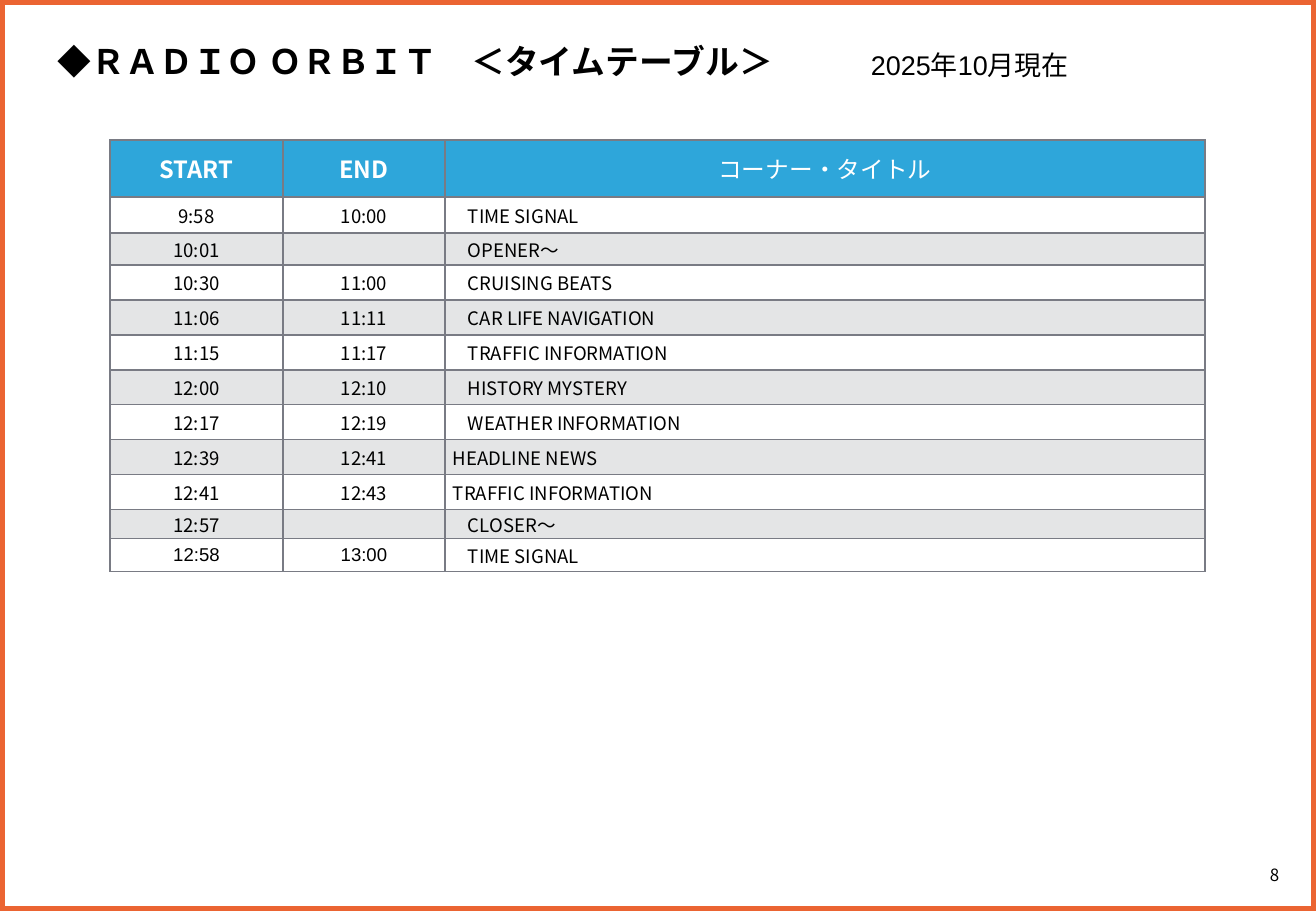
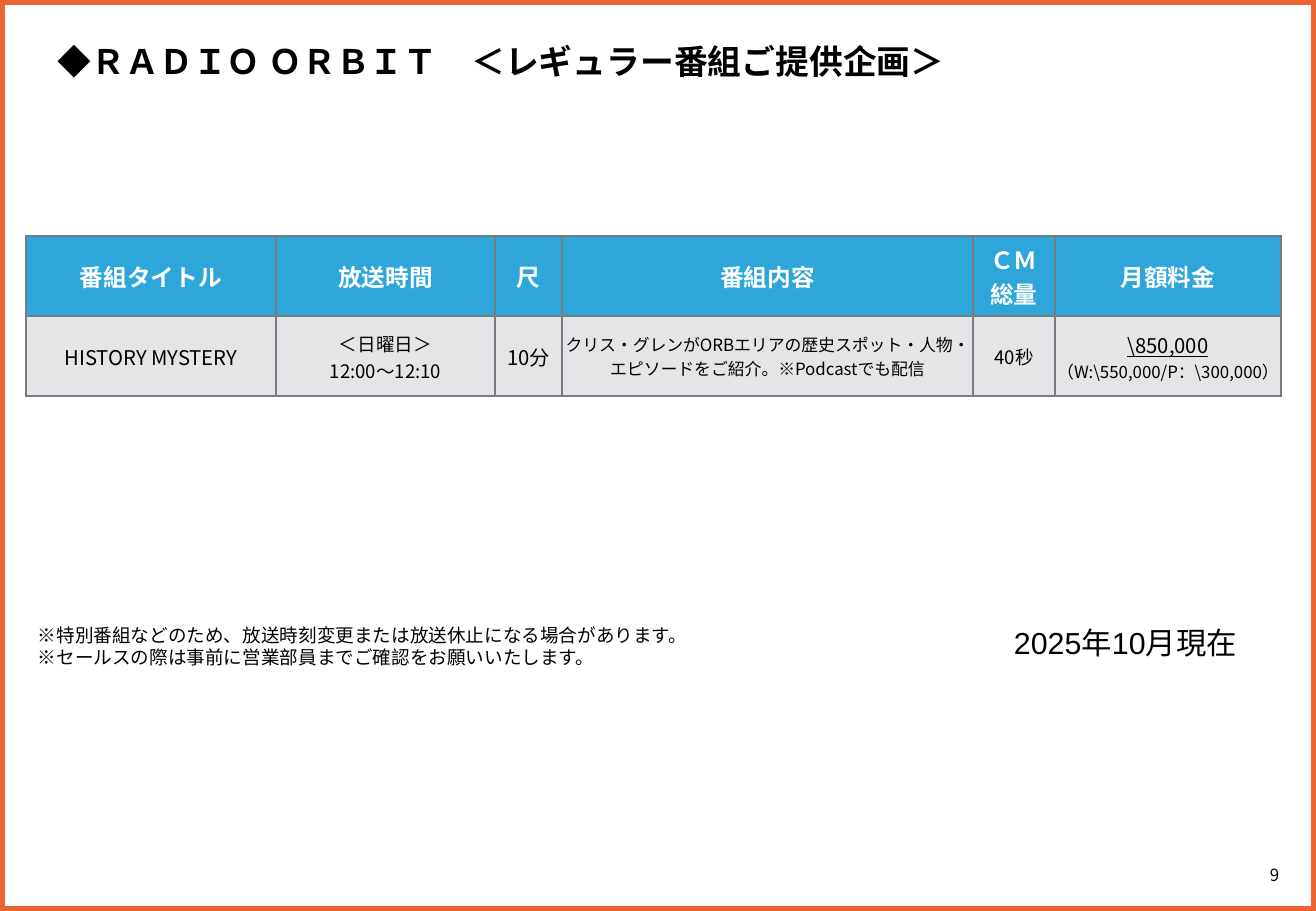
from lxml.etree import SubElement
from pptx import Presentation
from pptx.dml.color import RGBColor
from pptx.enum.shapes import MSO_SHAPE
from pptx.enum.text import MSO_ANCHOR, PP_ALIGN
from pptx.oxml.ns import qn
from pptx.util import Emu, Pt

PX = 914400 / 121.5
W, H = 1316, 911
ORANGE = RGBColor(0xEB, 0x64, 0x32)
BLUE = RGBColor(0x2E, 0xA6, 0xDA)
STRIPE = RGBColor(0xE4, 0xE5, 0xE6)
GRID = RGBColor(0x79, 0x7B, 0x84)
WHITE = RGBColor(0xFF, 0xFF, 0xFF)
BLACK = RGBColor(0x00, 0x00, 0x00)
NOTO, ARIAL = "Noto Sans CJK JP", "Arial"
LEFT, CENTER = PP_ALIGN.LEFT, PP_ALIGN.CENTER
TOP, MIDDLE = MSO_ANCHOR.TOP, MSO_ANCHOR.MIDDLE
DATE = "2025年10月現在"


def px(*lengths):
    return [Emu(round(n * PX)) for n in lengths]


def write(tf, paragraphs, align):
    """Fill tf; each paragraph is a list of (text, size, font, colour, bold, underline)."""
    for i, runs in enumerate(paragraphs):
        p = tf.paragraphs[0] if i == 0 else tf.add_paragraph()
        p.alignment = align
        for text, size, font, color, bold, underline in runs:
            if not text:
                SubElement(p._p, qn("a:endParaRPr"), sz=str(size * 100))
                continue
            r = p.add_run()
            r.text = text
            r.font.size, r.font.bold, r.font.underline = Pt(size), bold, underline
            r.font.color.rgb = color
            r.font.name = font
            SubElement(r.font._element, qn("a:ea"), typeface=NOTO)


# Timetable: start, end, corner title, indent of the title
corners = [
    ("9:58", "10:00", "TIME SIGNAL", 23),
    ("10:01", "", "OPENER〜", 23),
    ("10:30", "11:00", "CRUISING BEATS", 23),
    ("11:06", "11:11", "CAR LIFE NAVIGATION", 23),
    ("11:15", "11:17", "TRAFFIC INFORMATION", 23),
    ("12:00", "12:10", "HISTORY MYSTERY", 23),
    ("12:17", "12:19", "WEATHER INFORMATION", 23),
    ("12:39", "12:41", "HEADLINE NEWS", 8),
    ("12:41", "12:43", "TRAFFIC INFORMATION", 8),
    ("12:57", "", "CLOSER〜", 23),
    ("12:58", "13:00", "TIME SIGNAL", 23),
]
# A cell is (align, left/top/right/bottom margins, paragraphs)
timetable = [[
    (CENTER, (0, 0, 0, 0), [[(text, 14, font, WHITE, font == NOTO, False)]])
    for text, font in (("START", NOTO), ("END", NOTO), ("コーナー・タイトル", ARIAL))
]]
for start, end, corner, indent in corners:
    time_font = ARIAL if start == "12:58" else NOTO
    timetable.append([
        (align, (left, 0, 0, 0), [[(text, 11, font, BLACK, False, False)]])
        for text, font, align, left in (
            (start, time_font, CENTER, 0), (end, time_font, CENTER, 0), (corner, NOTO, LEFT, indent))
    ])

# Sponsorship plan: each cell is a list of (line, size)
plan_cells = [
    [("HISTORY MYSTERY", 12)],
    [("＜日曜日＞", 11), ("12:00～12:10", 11)],
    [("10分", 12)],
    [("クリス・グレンがORBエリアの歴史スポット・人物・エピソードをご紹介。※Podcastでも配信", 10)],
    [("40秒", 11)],
    [("\\850,000", 12), ("（W:\\550,000/P：\\300,000）", 10)],
]
plan = [
    [(CENTER, (12, 6, 12, 6), [[(text, 14, ARIAL, WHITE, True, False)]])
     for text in ("番組タイトル", "放送時間", "尺", "番組内容", "ＣＭ総量", "月額料金")],
    [(CENTER, (1, 1, 1, 0), [[(text, size, NOTO, BLACK, False, text == "\\850,000")] for text, size in lines])
     for lines in plan_cells],
]
notes = [
    [(text, 11, NOTO, BLACK, False, False)] for text in (
        "※特別番組などのため、放送時刻変更または放送休止になる場合があります。",
        "※セールスの際は事前に営業部員までご確認をお願いいたします。")
]

# Page, heading, table place, columns, rows, cells, striped row parity, header rule, date place and size, notes
slides = [
    (8, "タイムテーブル", (110, 140), [173, 162, 760], [57, 36, 32] + [35] * 7 + [29, 33],
     timetable, 0, 1, (859, 43, 230, 45), 16, []),
    (9, "レギュラー番組ご提供企画", (26, 236), [250, 219, 67, 411, 82, 226], [80, 80],
     plan, 1, 2, (1002, 618, 259, 49), 18, notes),
]

prs = Presentation()
prs.slide_width, prs.slide_height = px(W, H)

for page, heading, place, cols, rows, cells, stripe, header_rule, date_box, date_size, notes_text in slides:
    s = prs.slides.add_slide(prs.slide_layouts[6])

    frame = s.shapes.add_shape(MSO_SHAPE.RECTANGLE, *px(0, 0, W, H))
    frame.shadow.inherit = False
    frame.fill.background()
    frame.line.color.rgb = ORANGE
    frame.line.width = Pt(6)

    table = s.shapes.add_table(len(rows), len(cols), *px(*place, sum(cols), sum(rows))).table
    table.first_row = table.horz_banding = False
    for column, width in zip(table.columns, px(*cols)):
        column.width = width
    for row, height in zip(table.rows, px(*rows)):
        row.height = height
    for i, row_cells in enumerate(cells):
        for j, (align, margins, paragraphs) in enumerate(row_cells):
            cell = table.cell(i, j)
            cell.vertical_anchor = MIDDLE
            cell.margin_left, cell.margin_top, cell.margin_right, cell.margin_bottom = px(*margins)
            for side in ("lnL", "lnR", "lnT", "lnB"):
                weight = header_rule if i == 0 and side == "lnB" else 1
                ln = SubElement(cell._tc.get_or_add_tcPr(), qn(f"a:{side}"), w=str(Pt(weight)))
                SubElement(SubElement(ln, qn("a:solidFill")), qn("a:srgbClr"), val=str(GRID))
            if i == 0 or i % 2 == stripe:
                cell.fill.solid()
                cell.fill.fore_color.rgb = STRIPE if i else BLUE
            else:
                cell.fill.background()
            write(cell.text_frame, paragraphs, align)

    title = [("◆", 20, NOTO, BLACK, False, False),
             (f"ＲＡＤＩＯ ＯＲＢＩＴ　＜{heading}＞", 20, NOTO, BLACK, True, False)]
    texts = [
        ((1234, 853, 81, 43), MIDDLE, CENTER, [[(str(page), 10, NOTO, BLACK, False, False)]]),
        (date_box, TOP, LEFT, [[(DATE, date_size, ARIAL, BLACK, False, False)]]),
        ((46, 35, 1005, 53), TOP, LEFT, [title]),
    ]
    if notes_text:
        texts.append(((26, 618, 1176, 57), TOP, LEFT, notes_text))
    for box, anchor, align, paragraphs in texts:
        tf = s.shapes.add_textbox(*px(*box)).text_frame
        tf.word_wrap = True
        tf.vertical_anchor = anchor
        write(tf, paragraphs, align)

prs.save("out.pptx")
